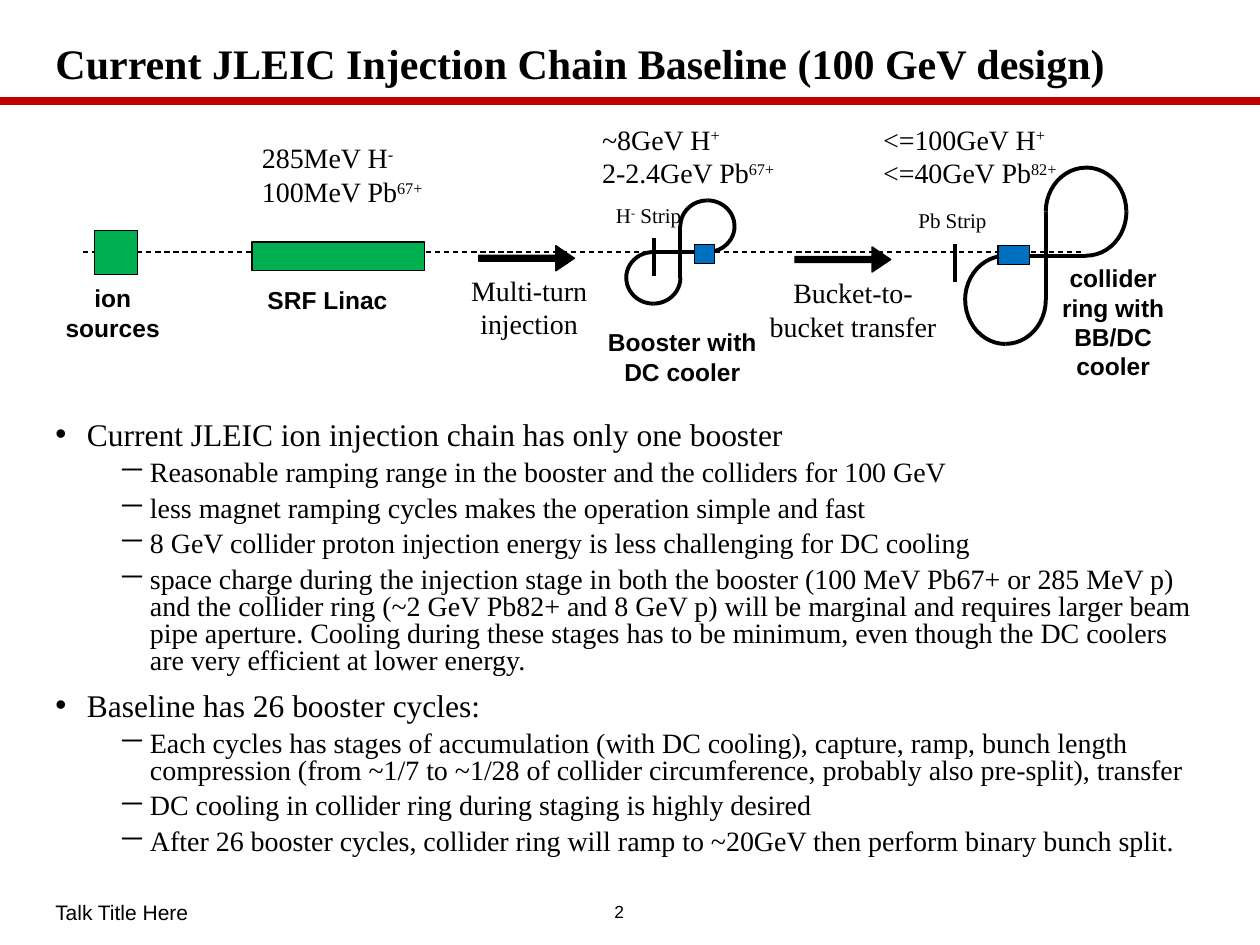
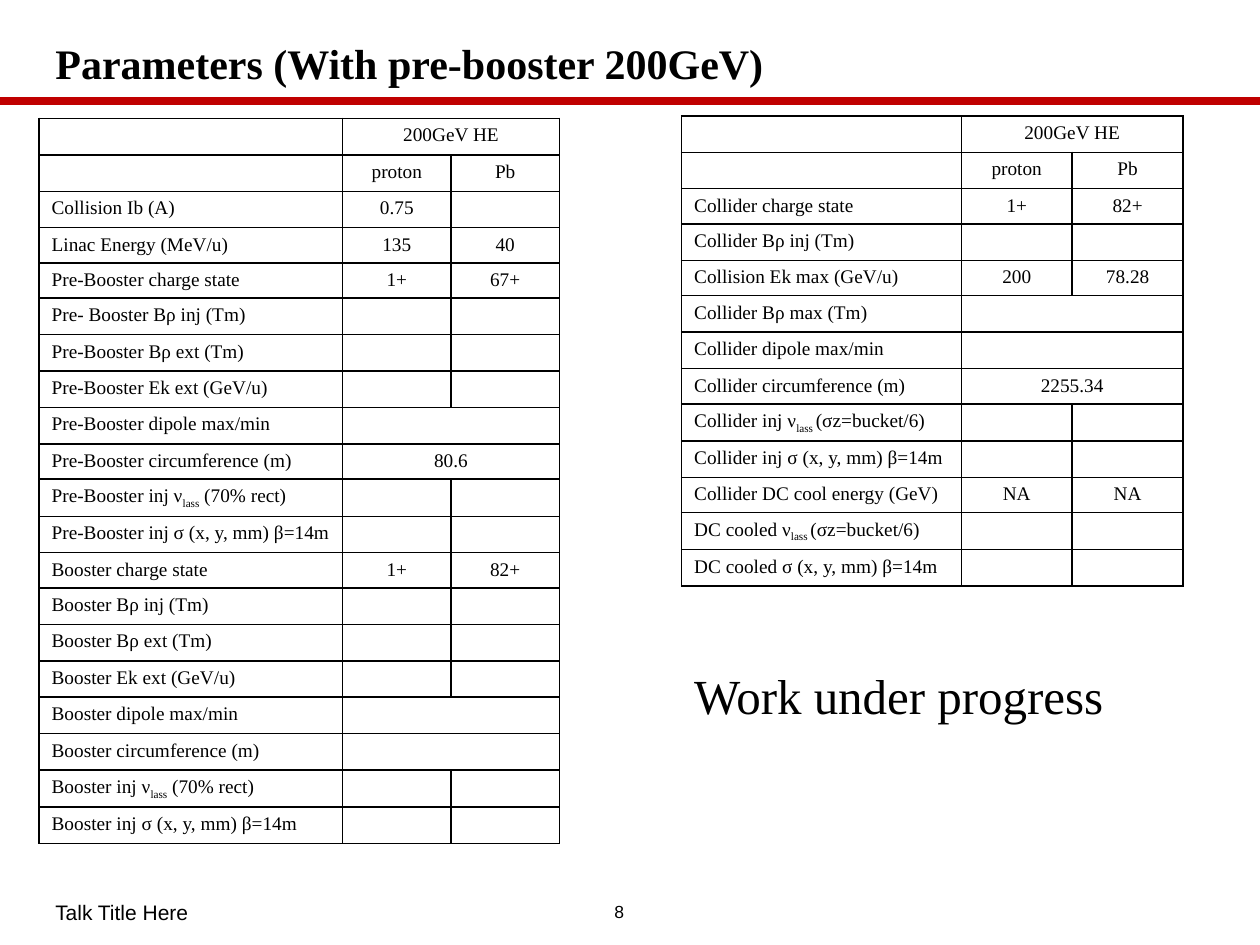
from lxml.etree import SubElement
from pptx import Presentation
from pptx.dml.color import RGBColor
from pptx.enum.dml import MSO_LINE
from pptx.enum.shapes import MSO_CONNECTOR, MSO_SHAPE
from pptx.enum.text import MSO_ANCHOR, MSO_AUTO_SIZE, PP_ALIGN
from pptx.oxml.ns import qn
from pptx.util import Inches, Pt

COLORS = {
    "text": "000000",
    "rule": "C00000",
    "source": "00B050",
    "cooler": "0070C0",
    "paper": "FFFFFF",
}
SERIF = "Times New Roman"
SANS = "Arial"
LEFT, CENTER = PP_ALIGN.LEFT, PP_ALIGN.CENTER


def write_paragraph(paragraph, text, size, font=SERIF, bold=False, align=LEFT, shift=30):
    """Write text run by run; every second piece between bars is raised by shift percent."""
    paragraph.alignment = align
    for index, piece in enumerate(text.split("|")):
        run = paragraph.add_run()
        run.text = piece
        run.font.name = font
        run.font.size = Pt(size)
        run.font.bold = bold
        run.font.color.rgb = RGBColor.from_string(COLORS["text"])
        if index % 2:
            run._r.get_or_add_rPr().set("baseline", str(shift * 1000))


def add_line(shapes, start, end, width=2.25, color="text"):
    points = [Inches(value) for value in (*start, *end)]
    connector = shapes.add_connector(MSO_CONNECTOR.STRAIGHT, *points)
    connector.line.color.rgb = RGBColor.from_string(COLORS[color])
    connector.line.width = Pt(width)
    SubElement(connector._element.spPr, qn("a:effectLst"))
    return connector


presentation = Presentation()
presentation.slide_width = Inches(10)
presentation.slide_height = Inches(7.5)

# Shared frame: title, red rule, footer and page number
labels = []
slides = []
for layout_index, page, heading in [
    (1, "2", "Current JLEIC Injection Chain Baseline (100 GeV design)"),
    (5, "8", "Parameters (With pre-booster 200GeV)"),
]:
    slide = presentation.slides.add_slide(presentation.slide_layouts[layout_index])
    slides.append(slide)
    add_line(slide.shapes, (0, 0.8), (10, 0.8), 4.5, "rule")
    title = slide.shapes.title
    title.left, title.top = Inches(0.34), Inches(0.26)
    title.width, title.height = Inches(9.26), Inches(0.53)
    title.text_frame.auto_size = MSO_AUTO_SIZE.NONE
    title.text_frame.vertical_anchor = MSO_ANCHOR.MIDDLE
    paragraph = title.text_frame.paragraphs[0]
    paragraph.line_spacing = 0.9
    write_paragraph(paragraph, heading, 24, bold=True)
    labels += [
        (slide.shapes, (0.34, 7.07, 4.28, 0.34), ["Talk Title Here"], 12, SANS, False, LEFT, True),
        (slide.shapes, (4.62, 7.07, 0.59, 0.33), [page], 10, SANS, False, CENTER, True),
    ]
chain_slide, parameter_slide = slides

# Bulleted list
body = chain_slide.placeholders[1]
body.left, body.top = Inches(0.34), Inches(3.3)
body.width, body.height = Inches(9.26), Inches(3.64)
body.text_frame.auto_size = MSO_AUTO_SIZE.NONE
bullet_styles = [
    {"size": 18, "margin": 0.25, "before": 10, "mark": "•"},
    {"size": 16, "margin": 0.75, "before": 5, "mark": "－"},
]
bullets = [
    (0, "Current JLEIC ion injection chain has only one booster"),
    (1, "Reasonable ramping range in the booster and the colliders for 100 GeV"),
    (1, "less magnet ramping cycles makes the operation simple and fast"),
    (1, "8 GeV collider proton injection energy is less challenging for DC cooling"),
    (1, "space charge during the injection stage in both the booster (100 MeV Pb67+ or 285 MeV p) "
        "and the collider ring (~2 GeV Pb82+ and 8 GeV p) will be marginal and requires larger beam "
        "pipe aperture. Cooling during these stages has to be minimum, even though the DC coolers "
        "are very efficient at lower energy."),
    (0, "Baseline has 26 booster cycles:"),
    (1, "Each cycles has stages of accumulation (with DC cooling), capture, ramp, bunch length "
        "compression (from ~1/7 to ~1/28 of collider circumference, probably also pre-split), transfer"),
    (1, "DC cooling in collider ring during staging is highly desired"),
    (1, "After 26 booster cycles, collider ring will ramp to ~20GeV then perform binary bunch split."),
]
for index, (level, text) in enumerate(bullets):
    style = bullet_styles[level]
    paragraph = body.text_frame.add_paragraph() if index else body.text_frame.paragraphs[0]
    paragraph.level = level
    properties = paragraph._p.get_or_add_pPr()
    properties.set("marL", str(Inches(style["margin"])))
    properties.set("indent", str(-Inches(0.25)))
    SubElement(properties, qn("a:buChar"), char=style["mark"])
    paragraph.line_spacing = 0.8
    paragraph.space_before = Pt(style["before"] if index else 0)
    write_paragraph(paragraph, text, style["size"])

# Injection chain diagram
diagram = chain_slide.shapes.add_group_shape().shapes
beam_axis = add_line(diagram, (0.66, 2), (8.58, 2), 0.75)
beam_axis.line.dash_style = MSO_LINE.DASH

# Figure-eight rings: crossing point and size of one lobe
for x, y, width, height in [(5.4, 2, 0.43, 0.41), (8.3, 2.03, 0.64, 0.7)]:
    add_line(diagram, (x, y - height / 2), (x, y + height / 2))
    add_line(diagram, (x + width / 2, y), (x - width / 2, y))
    for side, rotations in [(1, (0, 270, 90)), (-1, (180, 90, 270))]:
        center_x, center_y = x + side * width / 2, y - side * height / 2
        for rotation in rotations:
            arc_width, arc_height = (height, width) if rotation % 180 else (width, height)
            arc = diagram.add_shape(
                MSO_SHAPE.ARC,
                Inches(center_x - arc_width / 2), Inches(center_y - arc_height / 2),
                Inches(arc_width), Inches(arc_height),
            )
            arc.rotation = rotation
            arc.shadow.inherit = False
            arc.fill.background()
            arc.line.color.rgb = RGBColor.from_string(COLORS["text"])
            arc.line.width = Pt(2.25)

for strip_x, strip_top in [(5.19, 1.89), (7.58, 1.94)]:
    add_line(diagram, (strip_x, strip_top), (strip_x, strip_top + 0.3))

for kind, box, color in [
    (MSO_SHAPE.RECTANGLE, (0.75, 1.83, 0.34, 0.35), "source"),
    (MSO_SHAPE.RECTANGLE, (2, 1.92, 1.37, 0.23), "source"),
    (MSO_SHAPE.RECTANGLE, (5.51, 1.94, 0.16, 0.15), "cooler"),
    (MSO_SHAPE.RECTANGLE, (7.92, 1.95, 0.25, 0.15), "cooler"),
    (MSO_SHAPE.RIGHT_ARROW, (3.8, 1.95, 0.76, 0.2), "text"),
    (MSO_SHAPE.RIGHT_ARROW, (6.31, 1.96, 0.76, 0.2), "text"),
]:
    shape = diagram.add_shape(kind, *[Inches(value) for value in box])
    shape.shadow.inherit = False
    shape.fill.solid()
    shape.fill.fore_color.rgb = RGBColor.from_string(COLORS[color])
    shape.line.color.rgb = RGBColor.from_string(COLORS["text"])
    shape.line.width = Pt(0.75)
    if kind == MSO_SHAPE.RIGHT_ARROW:
        shape.adjustments[0] = 0.24
        shape.adjustments[1] = 0.74

for box, text in [
    ((0.33, 2.2, 1.13, 0.57), "ion sources"),
    ((1.83, 2.21, 1.54, 0.34), "SRF Linac"),
    ((4.59, 2.55, 1.65, 0.57), "Booster with DC cooler"),
    ((8.25, 2.04, 1.17, 1.04), "collider ring with BB/DC cooler"),
]:
    labels.append((diagram, box, [text], 14, SANS, True, CENTER, True))
for box, lines, size in [
    ((1.98, 1.07, 1.52, 0.64), ["285MeV H|-", "100MeV Pb|67+"], 16),
    ((4.68, 0.92, 1.62, 0.64), ["~8GeV H|+", "2-2.4GeV Pb|67+"], 16),
    ((6.91, 0.92, 1.62, 0.64), ["<=100GeV H|+", "<=40GeV Pb|82+"], 16),
    ((4.79, 1.56, 0.73, 0.3), ["H|-| Strip"], 12),
    ((7.19, 1.6, 0.75, 0.3), ["Pb Strip"], 12),
]:
    labels.append((diagram, box, lines, size, SERIF, False, LEFT, False))
labels += [
    (diagram, (3.43, 2.12, 1.54, 0.64), ["Multi-turn injection"], 16, SERIF, False, CENTER, True),
    (diagram, (6, 2.14, 1.54, 0.64), ["Bucket-to-bucket transfer"], 16, SERIF, False, CENTER, True),
    (parameter_slide.shapes, (5.41, 5.23, 3.49, 0.57), ["Work under progress"], 28, SERIF, False,
     LEFT, False),
]

# Parameter tables: a row with a single value spans both species
header_rows = [("", "200GeV HE"), ("", "proton", "Pb")]
injector_rows = header_rows + [
    ("Collision Ib (A)", "0.75", ""),
    ("Linac Energy (MeV/u)", "135", "40"),
    ("Pre-Booster charge state", "1+", "67+"),
    ("Pre- Booster Bρ inj (Tm)", "", ""),
    ("Pre-Booster Bρ ext (Tm)", "", ""),
    ("Pre-Booster Ek ext (GeV/u)", "", ""),
    ("Pre-Booster dipole max/min", ""),
    ("Pre-Booster circumference (m)", "80.6"),
    ("Pre-Booster inj ν|lass| (70% rect)", "", ""),
    ("Pre-Booster inj σ (x, y, mm) β=14m", "", ""),
    ("Booster charge state", "1+", "82+"),
    ("Booster Bρ inj (Tm)", "", ""),
    ("Booster Bρ ext (Tm)", "", ""),
    ("Booster Ek ext (GeV/u)", "", ""),
    ("Booster dipole max/min", ""),
    ("Booster circumference (m)", ""),
    ("Booster inj ν|lass| (70% rect)", "", ""),
    ("Booster inj σ (x, y, mm) β=14m", "", ""),
]
collider_rows = header_rows + [
    ("Collider charge state", "1+", "82+"),
    ("Collider Bρ inj (Tm)", "", ""),
    ("Collision Ek max (GeV/u)", "200", "78.28"),
    ("Collider Bρ max (Tm)", ""),
    ("Collider dipole max/min", ""),
    ("Collider circumference (m)", "2255.34"),
    ("Collider inj ν|lass |(σz=bucket/6)", "", ""),
    ("Collider inj σ (x, y, mm) β=14m", "", ""),
    ("Collider DC cool energy (GeV)", "NA", "NA"),
    ("DC cooled ν|lass |(σz=bucket/6)", "", ""),
    ("DC cooled σ (x, y, mm) β=14m", "", ""),
]
for left, top, column_widths, rows in [
    (0.31, 0.94, (2.41, 0.86, 0.86), injector_rows),
    (5.41, 0.92, (2.22, 0.88, 0.88), collider_rows),
]:
    table = parameter_slide.shapes.add_table(
        len(rows), 3, Inches(left), Inches(top),
        Inches(sum(column_widths)), Inches(0.28 * len(rows)),
    ).table
    table.first_row = False
    table.horz_banding = False
    for column, width in zip(table.columns, column_widths):
        column.width = Inches(width)
    for row_index, values in enumerate(rows):
        if len(values) == 2:
            table.cell(row_index, 1).merge(table.cell(row_index, 2))
        for column_index in range(3):
            cell = table.cell(row_index, column_index)
            cell_properties = cell._tc.get_or_add_tcPr()
            for edge in ("a:lnL", "a:lnR", "a:lnT", "a:lnB"):
                border = SubElement(cell_properties, qn(edge), w=str(Pt(1)))
                border_fill = SubElement(border, qn("a:solidFill"))
                SubElement(border_fill, qn("a:srgbClr"), val=COLORS["text"])
            cell.fill.solid()
            cell.fill.fore_color.rgb = RGBColor.from_string(COLORS["paper"])
            paragraph = cell.text_frame.paragraphs[0]
            text = values[column_index] if column_index < len(values) else ""
            if text:
                align = CENTER if column_index else LEFT
                write_paragraph(paragraph, text, 11, align=align, shift=-25)
            else:
                SubElement(paragraph._p, qn("a:endParaRPr"), sz="1100")

# Text boxes of both slides
for shapes, box, lines, size, font, bold, align, wrap in labels:
    text_box = shapes.add_textbox(*[Inches(value) for value in box])
    frame = text_box.text_frame
    frame.word_wrap = wrap
    if shapes is diagram or not wrap:
        frame.auto_size = MSO_AUTO_SIZE.SHAPE_TO_FIT_TEXT
    else:
        frame.vertical_anchor = MSO_ANCHOR.MIDDLE
    for index, line in enumerate(lines):
        paragraph = frame.add_paragraph() if index else frame.paragraphs[0]
        write_paragraph(paragraph, line, size, font, bold, align)

presentation.save("out.pptx")
